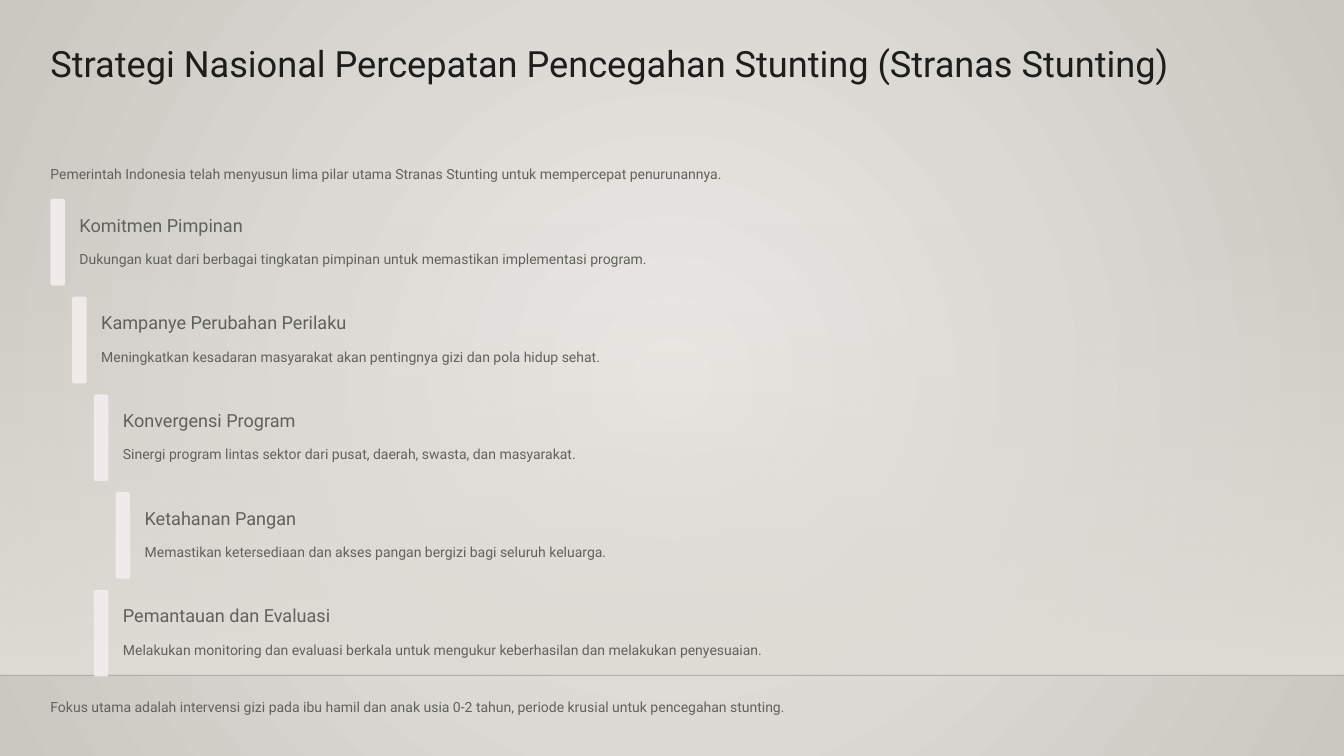
from lxml import etree
from pptx import Presentation
from pptx.dml.color import RGBColor
from pptx.enum.shapes import MSO_CONNECTOR, MSO_SHAPE
from pptx.enum.text import MSO_ANCHOR, MSO_AUTO_SIZE, PP_ALIGN
from pptx.oxml.ns import qn
from pptx.util import Pt

RECT, ROUNDED = MSO_SHAPE.RECTANGLE, MSO_SHAPE.ROUNDED_RECTANGLE
STRAIGHT = MSO_CONNECTOR.STRAIGHT
TOP, LEFT, NO_FIT = MSO_ANCHOR.TOP, PP_ALIGN.LEFT, MSO_AUTO_SIZE.NONE

FONT = "Roboto"
COLORS = {
    "center": "ECEAE7",
    "edge": "CAC7C1",
    "ground": "DFDBD5",
    "horizon": "000001",
    "title": "1D1D1B",
    "body": "61615C",
    "bar": "F0EAEA",
}
SLIDE_W, SLIDE_H = 1152, 648
MARGIN = 43.2
CONTENT_W = 1064.9
INDENT = 18.64
PITCH = 83.76

TITLE = "Strategi Nasional Percepatan Pencegahan Stunting (Stranas Stunting)"
INTRO = ("Pemerintah Indonesia telah menyusun lima pilar utama Stranas Stunting "
         "untuk mempercepat penurunannya.")
FOCUS = ("Fokus utama adalah intervensi gizi pada ibu hamil dan anak usia 0-2 tahun, "
         "periode krusial untuk pencegahan stunting.")
PILLARS = [
    (0, "Komitmen Pimpinan",
     "Dukungan kuat dari berbagai tingkatan pimpinan untuk memastikan implementasi program."),
    (1, "Kampanye Perubahan Perilaku",
     "Meningkatkan kesadaran masyarakat akan pentingnya gizi dan pola hidup sehat."),
    (2, "Konvergensi Program",
     "Sinergi program lintas sektor dari pusat, daerah, swasta, dan masyarakat."),
    (3, "Ketahanan Pangan",
     "Memastikan ketersediaan dan akses pangan bergizi bagi seluruh keluarga."),
    (2, "Pemantauan dan Evaluasi",
     "Melakukan monitoring dan evaluasi berkala untuk mengukur keberhasilan "
     "dan melakukan penyesuaian."),
]


def rgb(name):
    return RGBColor.from_string(COLORS[name])


def set_alpha(element, percent):
    color = element.find(".//" + qn("a:srgbClr"))
    etree.SubElement(color, qn("a:alpha"), val=str(percent * 1000))


def set_gradient(fill, start, end):
    fill.gradient()
    for stop, name, position in zip(fill.gradient_stops, (start, end), (0, 1)):
        stop.color.rgb = rgb(name)
        stop.position = position


def write(tf, text, size, spacing, color, wrap):
    tf.margin_left = tf.margin_right = tf.margin_top = tf.margin_bottom = 0
    tf.word_wrap = wrap
    tf.auto_size = NO_FIT
    tf.vertical_anchor = TOP
    p = tf.paragraphs[0]
    p.alignment = LEFT
    p.line_spacing = Pt(spacing)
    r = p.add_run()
    r.text = text
    r.font.name = FONT
    r.font.size = Pt(size)
    r.font.color.rgb = rgb(color)


def add_text(slide, x, y, w, h, text, size=12, spacing=19.5):
    sp = slide.shapes.add_textbox(Pt(x), Pt(y), Pt(w), Pt(h))
    write(sp.text_frame, text, size, spacing, "body", False)


def add_backdrop(slide, x, y, w, h):
    set_gradient(slide.background.fill, "center", "edge")
    grad = slide.background._cSld.find(".//" + qn("a:gradFill"))
    grad.remove(grad.find(qn("a:lin")))
    radial = etree.SubElement(grad, qn("a:path"), {"path": "circle"})
    etree.SubElement(radial, qn("a:fillToRect"), l="50000", t="50000", r="50000", b="50000")

    sp = slide.shapes.add_shape(RECT, Pt(x), Pt(y), Pt(w), Pt(h))
    sp.shadow.inherit = False
    sp.line.fill.background()
    set_gradient(sp.fill, "ground", "ground")
    sp.fill.gradient_angle = 270
    stops = sp._element.spPr.findall(".//" + qn("a:gs"))
    for stop, percent in zip(stops, (0, 100)):
        set_alpha(stop, percent)

    horizon = slide.shapes.add_connector(STRAIGHT, Pt(x), Pt(y + h), Pt(x + w), Pt(y + h))
    horizon.line.color.rgb = rgb("horizon")
    horizon.line.width = Pt(1)
    set_alpha(horizon.line._get_or_add_ln(), 20)
    etree.SubElement(horizon._element.spPr, qn("a:effectLst"))


def add_title(slide, x, y, w, h):
    sp = slide.shapes.title
    sp.left, sp.top, sp.width, sp.height = Pt(x), Pt(y), Pt(w), Pt(h)
    write(sp.text_frame, TITLE, 31, 38.5, "title", True)


def add_pillar(slide, x, y, w, h, heading, detail):
    bar = slide.shapes.add_shape(ROUNDED, Pt(x), Pt(y), Pt(12.4), Pt(h))
    bar.adjustments[0] = 0.15
    bar.shadow.inherit = False
    bar.fill.solid()
    bar.fill.fore_color.rgb = rgb("bar")
    bar.line.fill.background()
    text_x, text_w = x + 24.9, w - 24.9
    add_text(slide, text_x, y + 12.4, text_w, 19.4, heading, 15.5, 19)
    add_text(slide, text_x, y + 39, text_w, 20.2, detail)


def add_pillars(slide, x, y, w):
    for i, (level, heading, detail) in enumerate(PILLARS):
        shift = level * INDENT
        add_pillar(slide, x + shift, y + i * PITCH, w - shift, 74.2, heading, detail)


def main():
    prs = Presentation()
    prs.slide_width, prs.slide_height = Pt(SLIDE_W), Pt(SLIDE_H)
    slide = prs.slides.add_slide(prs.slide_layouts[5])
    add_backdrop(slide, 0, 190.8, SLIDE_W, 388.1)
    add_title(slide, MARGIN, 33.8, CONTENT_W, 77.8)
    add_text(slide, MARGIN, 136.8, CONTENT_W, 20.2, INTRO)
    add_pillars(slide, MARGIN, 170.6, CONTENT_W)
    add_text(slide, MARGIN, 594, CONTENT_W, 20.2, FOCUS)
    prs.save("out.pptx")


if __name__ == "__main__":
    main()
